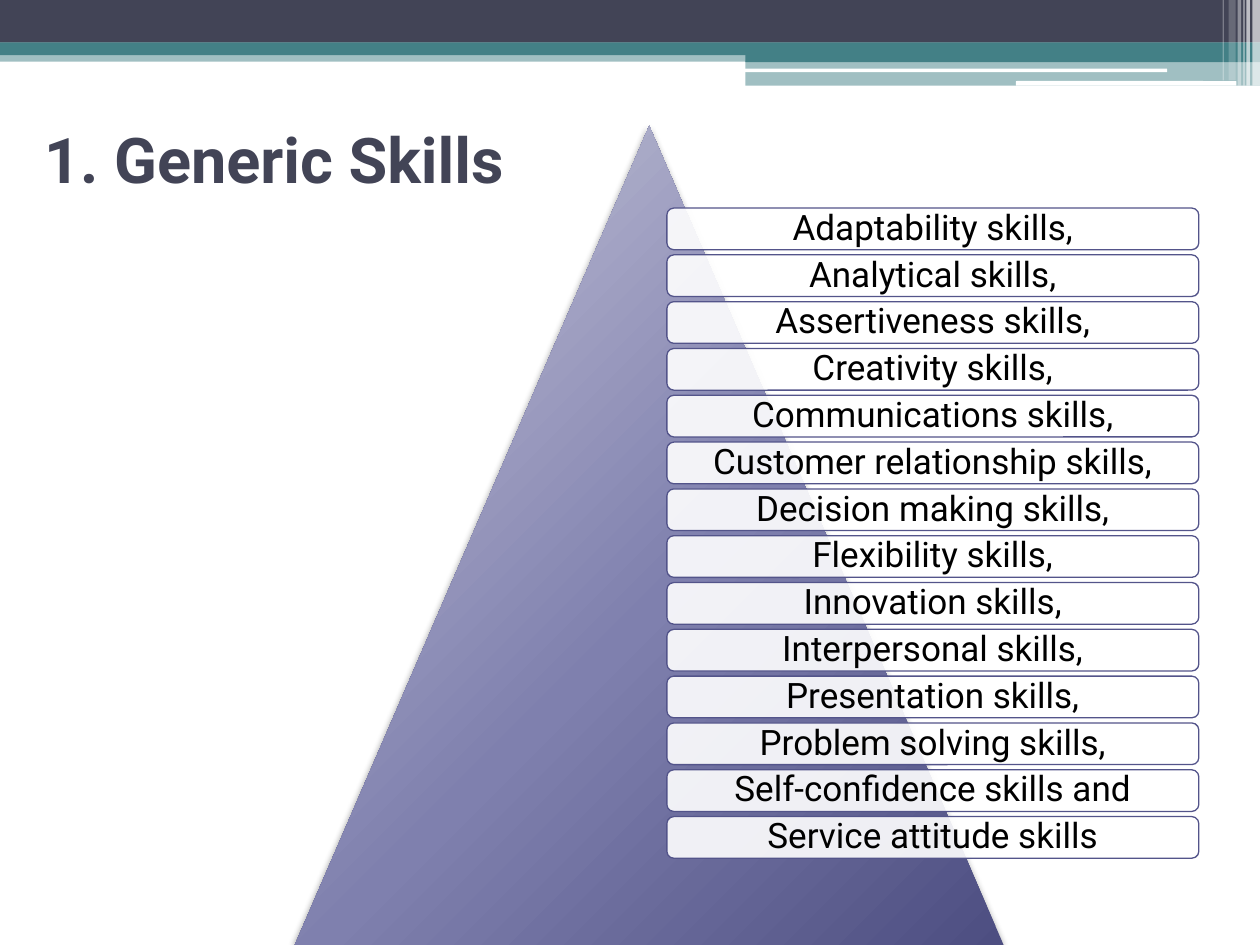
from dataclasses import dataclass

from pptx import Presentation
from pptx.dml.color import RGBColor as Rgb
from pptx.enum.shapes import MSO_SHAPE as Shape
from pptx.enum.text import MSO_ANCHOR as Anchor, PP_ALIGN as Align
from pptx.oxml import parse_xml
from pptx.oxml.ns import nsdecls, qn
from pptx.util import Pt


@dataclass(frozen=True)
class Theme:
    font: str = "Roboto"
    dark: str = "424456"
    teal: str = "438086"
    white: str = "FFFFFF"
    black: str = "000000"
    edge: str = "53548A"
    stops: tuple = ((0, "C9C9DA"), (55, "7F80AE"), (100, "4D4E81"))
    head: int = 36
    text: int = 20


class Deck:
    def __init__(self, theme):
        self.look = theme
        self.prs = Presentation()
        self.prs.slide_width, self.prs.slide_height = Pt(720), Pt(540)
        self.slide = self.prs.slides.add_slide(self.prs.slide_layouts[5])

    def shape(self, kind, box):
        item = self.slide.shapes.add_shape(kind, *map(Pt, box))
        item.shadow.inherit = False
        item.line.fill.background()
        return item

    def block(self, box, color, alpha=100, kind=Shape.RECTANGLE):
        item = self.shape(kind, box)
        item.fill.solid()
        item.fill.fore_color.rgb = Rgb.from_string(color)
        if alpha < 100:
            props = item.element.spPr
            tone = next(props.iter(qn("a:srgbClr")))
            tone.append(parse_xml(f'<a:alpha {nsdecls("a")} val="{alpha * 1000}"/>'))
        return item

    def add_text(self, frame, text, size, color, bold=False, align=Align.LEFT):
        frame.word_wrap = True
        frame.vertical_anchor = Anchor.MIDDLE
        para = frame.paragraphs[0]
        para.alignment = align
        run = para.add_run()
        run.text = text
        font = run.font
        font.name, font.size, font.bold = self.look.font, Pt(size), bold
        font.color.rgb = Rgb.from_string(color)
        return para

    def title(self, text, box):
        item = self.slide.shapes.title
        item.left, item.top, item.width, item.height = map(Pt, box)
        self.add_text(item.text_frame, text, self.look.head, self.look.dark, bold=True)

    def peak(self, box):
        """Triangle with a radial gradient and a soft shadow."""
        item = self.shape(Shape.ISOSCELES_TRIANGLE, box)
        stops = "".join(
            f'<a:gs pos="{pos * 1000}"><a:srgbClr val="{color}"/></a:gs>'
            for pos, color in self.look.stops)
        props = item.element.spPr
        props.find(qn("a:prstGeom")).addnext(parse_xml(
            f'<a:gradFill {nsdecls("a")} rotWithShape="1"><a:gsLst>{stops}</a:gsLst>'
            '<a:path path="circle"><a:fillToRect l="-40000" t="-90000" '
            'r="140000" b="190000"/></a:path></a:gradFill>'))
        props.find(qn("a:effectLst")).append(parse_xml(
            f'<a:outerShdw {nsdecls("a")} blurRad="{Pt(4)}" dist="{Pt(2)}" '
            f'dir="5400000" rotWithShape="0"><a:srgbClr val="{self.look.black}">'
            '<a:alpha val="45000"/></a:srgbClr></a:outerShdw>'))

    def label(self, text, box):
        item = self.block(box, self.look.white, 90, Shape.ROUNDED_RECTANGLE)
        item.line.color.rgb = Rgb.from_string(self.look.edge)
        item.line.width = Pt(0.75)
        frame = item.text_frame
        frame.margin_left = frame.margin_right = Pt(6)
        frame.margin_top = frame.margin_bottom = Pt(6)
        para = self.add_text(frame, text, self.look.text, self.look.black,
                             align=Align.CENTER)
        para.line_spacing = 0.9


SKILLS = (
    "Adaptability skills,", "Analytical skills,", "Assertiveness skills,",
    "Creativity skills,", "Communications skills,",
    "Customer relationship skills,", "Decision making skills,",
    "Flexibility skills,", "Innovation skills,", "Interpersonal skills,",
    "Presentation skills,", "Problem solving skills,",
    "Self-confidence skills and", "Service attitude skills",
)


def main():
    look = Theme()
    deck = Deck(look)

    # Header bands
    for box, color, alpha in (
        ((0, 28.5, 720, 6.8), look.teal, 50),
        ((0, 0, 720, 24.4), look.dark, 100),
        ((0, 24.3, 720, 7.2), look.teal, 100),
        ((426, 28.3, 294, 7.2), look.teal, 100),
        ((426, 34.7, 294, 14.2), look.teal, 50),
    ):
        deck.block(box, color, alpha)

    # White rules under the header
    for box in ((425.7, 39.2, 241.2, 2), (580.5, 46.3, 126, 2.7)):
        deck.block(box, look.white, kind=Shape.ROUNDED_RECTANGLE)

    # Thin stripes at the right edge
    for left, wide, high, alpha in (
        (715.7, 4.3, 49, 65), (712.2, 2, 49, 65), (710.5, 0.7, 49, 60),
        (707.2, 2, 49, 40), (702.1, 4, 46, 20), (698.7, 0.7, 46, 30),
    ):
        deck.block((left, 0, wide, high), look.white, alpha)

    # Title and pyramid
    deck.title("1. Generic Skills", (18, 48.4, 648, 84))
    deck.peak((168.5, 72, 405, 468))

    # Skill list, evenly stacked
    top, step = 118.9, 26.75
    for row, skill in enumerate(SKILLS):
        deck.label(skill, (381.1, top + row * step, 304, 23.8))

    deck.prs.save("out.pptx")


if __name__ == "__main__":
    main()
